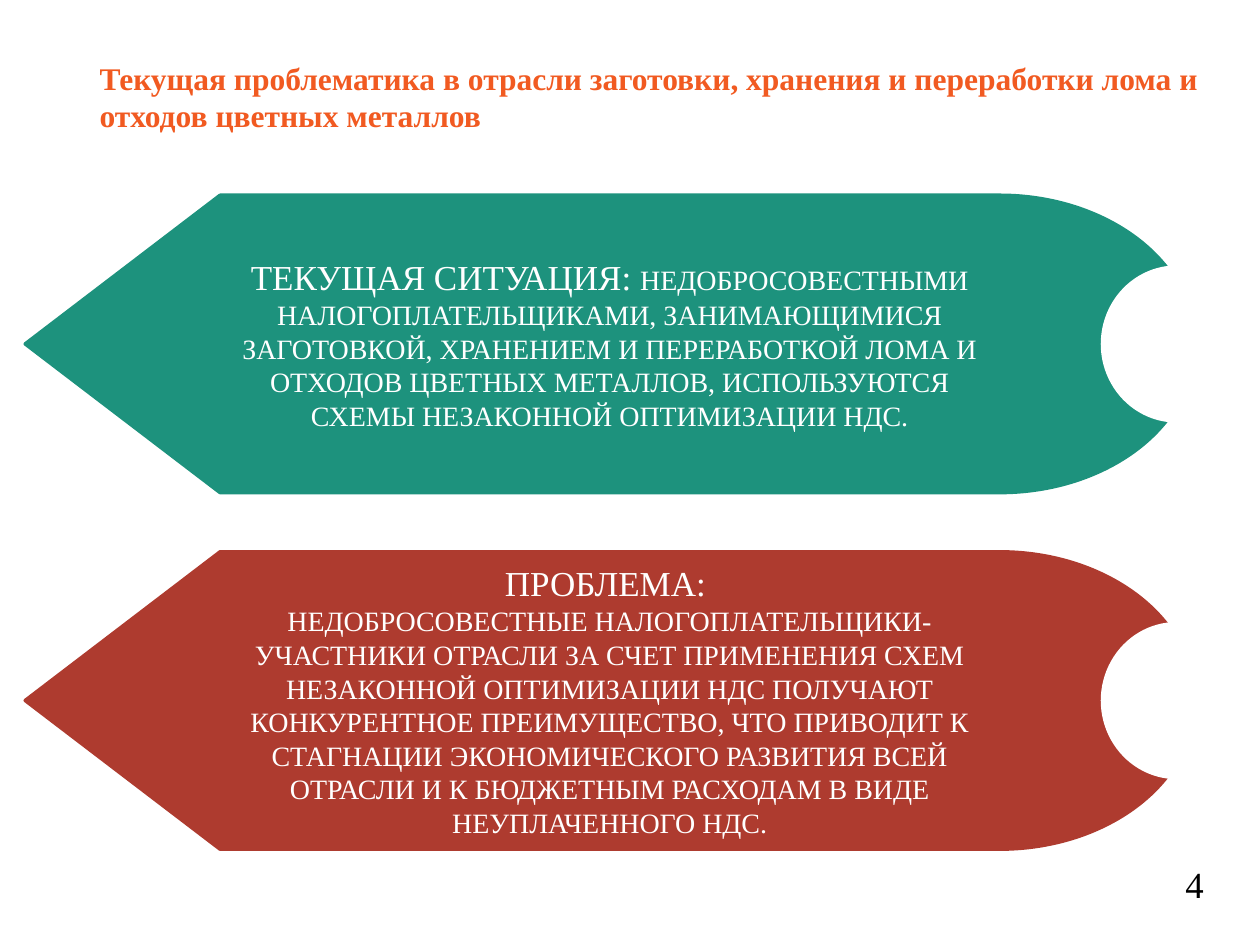
from dataclasses import dataclass

from pptx import Presentation
from pptx.dml.color import RGBColor
from pptx.enum.shapes import MSO_SHAPE
from pptx.enum.text import MSO_ANCHOR, MSO_AUTO_SIZE, PP_ALIGN
from pptx.util import Inches, Pt

FONT = "Times New Roman"
WHITE = "FFFFFF"


@dataclass
class Banner:
    top: float
    color: str
    paragraphs: list[list[tuple[str, int]]]  # text and size of each run


BANNERS = [
    Banner(1.55, "1D927D", [[
        ("ТЕКУЩАЯ СИТУАЦИЯ: ", 20),
        ("НЕДОБРОСОВЕСТНЫМИ НАЛОГОПЛАТЕЛЬЩИКАМИ, ЗАНИМАЮЩИМИСЯ ЗАГОТОВКОЙ, "
         "ХРАНЕНИЕМ И ПЕРЕРАБОТКОЙ ЛОМА И ОТХОДОВ ЦВЕТНЫХ МЕТАЛЛОВ, "
         "ИСПОЛЬЗУЮТСЯ СХЕМЫ НЕЗАКОННОЙ ОПТИМИЗАЦИИ НДС.", 16),
    ]]),
    Banner(4.38, "AE3B2F", [
        [("ПРОБЛЕМА: ", 20)],
        [("НЕДОБРОСОВЕСТНЫЕ НАЛОГОПЛАТЕЛЬЩИКИ-УЧАСТНИКИ ОТРАСЛИ ЗА СЧЕТ "
          "ПРИМЕНЕНИЯ СХЕМ НЕЗАКОННОЙ ОПТИМИЗАЦИИ НДС ПОЛУЧАЮТ КОНКУРЕНТНОЕ "
          "ПРЕИМУЩЕСТВО, ЧТО ПРИВОДИТ К СТАГНАЦИИ ЭКОНОМИЧЕСКОГО РАЗВИТИЯ ВСЕЙ "
          "ОТРАСЛИ И К БЮДЖЕТНЫМ РАСХОДАМ В ВИДЕ НЕУПЛАЧЕННОГО НДС.", 16)],
    ]),
]


def rgb(color: str) -> RGBColor:
    return RGBColor.from_string(color)


def style(span, size: float, color: str, bold: bool = False) -> None:
    span.font.name = FONT
    span.font.size = Pt(size)
    span.font.bold = bold
    span.font.color.rgb = rgb(color)


def set_margins(frame, side: float) -> None:
    frame.margin_left = frame.margin_right = Inches(side)
    frame.margin_top = frame.margin_bottom = Inches(0.04)


def add_solid(page, kind, left: float, top: float, width: float, height: float, color: str):
    shape = page.shapes.add_shape(
        kind, Inches(left), Inches(top), Inches(width), Inches(height))
    shape.shadow.inherit = False
    shape.fill.solid()
    shape.fill.fore_color.rgb = rgb(color)
    shape.line.color.rgb = rgb(color)
    shape.line.width = Pt(2)
    return shape


def add_title(page) -> None:
    title = page.shapes.title
    title.left, title.top = Inches(0.7), Inches(0.31)
    title.width, title.height = Inches(9.06), Inches(0.91)
    frame = title.text_frame
    frame.text = ("Текущая проблематика в отрасли заготовки, хранения и переработки лома и\n"
                  "отходов цветных металлов")
    frame.word_wrap = False
    frame.auto_size = MSO_AUTO_SIZE.NONE
    frame.vertical_anchor = MSO_ANCHOR.MIDDLE
    set_margins(frame, 0.09)
    for para in frame.paragraphs:
        para.alignment = PP_ALIGN.LEFT
        for span in para.runs:
            style(span, 18, "F15A21", bold=True)


def add_page_number(page, number: int) -> None:
    box = page.shapes.add_textbox(Inches(9.22), Inches(6.8), Inches(0.52), Inches(0.43))
    frame = box.text_frame
    frame.text = str(number)
    frame.word_wrap = True
    frame.auto_size = MSO_AUTO_SIZE.SHAPE_TO_FIT_TEXT
    set_margins(frame, 0.08)
    para = frame.paragraphs[0]
    para.alignment = PP_ALIGN.CENTER
    style(para.runs[0], 21, "000000")


def add_banner(page, banner: Banner) -> None:
    shape = add_solid(page, MSO_SHAPE.FLOWCHART_DISPLAY,
                      0.2, banner.top, 9.28, 2.36, banner.color)
    frame = shape.text_frame
    frame.word_wrap = True
    frame.vertical_anchor = MSO_ANCHOR.MIDDLE
    for index, runs in enumerate(banner.paragraphs):
        para = frame.add_paragraph() if index else frame.paragraphs[0]
        para.alignment = PP_ALIGN.CENTER
        for text, size in runs:
            span = para.add_run()
            span.text = text
            style(span, size, WHITE)


def add_notch(page, banner: Banner) -> None:
    """Cover the right end of a banner with a white circle."""
    add_solid(page, MSO_SHAPE.FLOWCHART_CONNECTOR,
              8.75, banner.top + 0.57, 1.18, 1.22, WHITE)


def main() -> None:
    deck = Presentation()
    deck.slide_width, deck.slide_height = Inches(10), Inches(7.5)
    page = deck.slides.add_slide(deck.slide_layouts[5])
    add_title(page)
    add_page_number(page, 4)
    for banner in BANNERS:
        add_banner(page, banner)
    for banner in BANNERS:
        add_notch(page, banner)
    deck.save("out.pptx")


if __name__ == "__main__":
    main()
